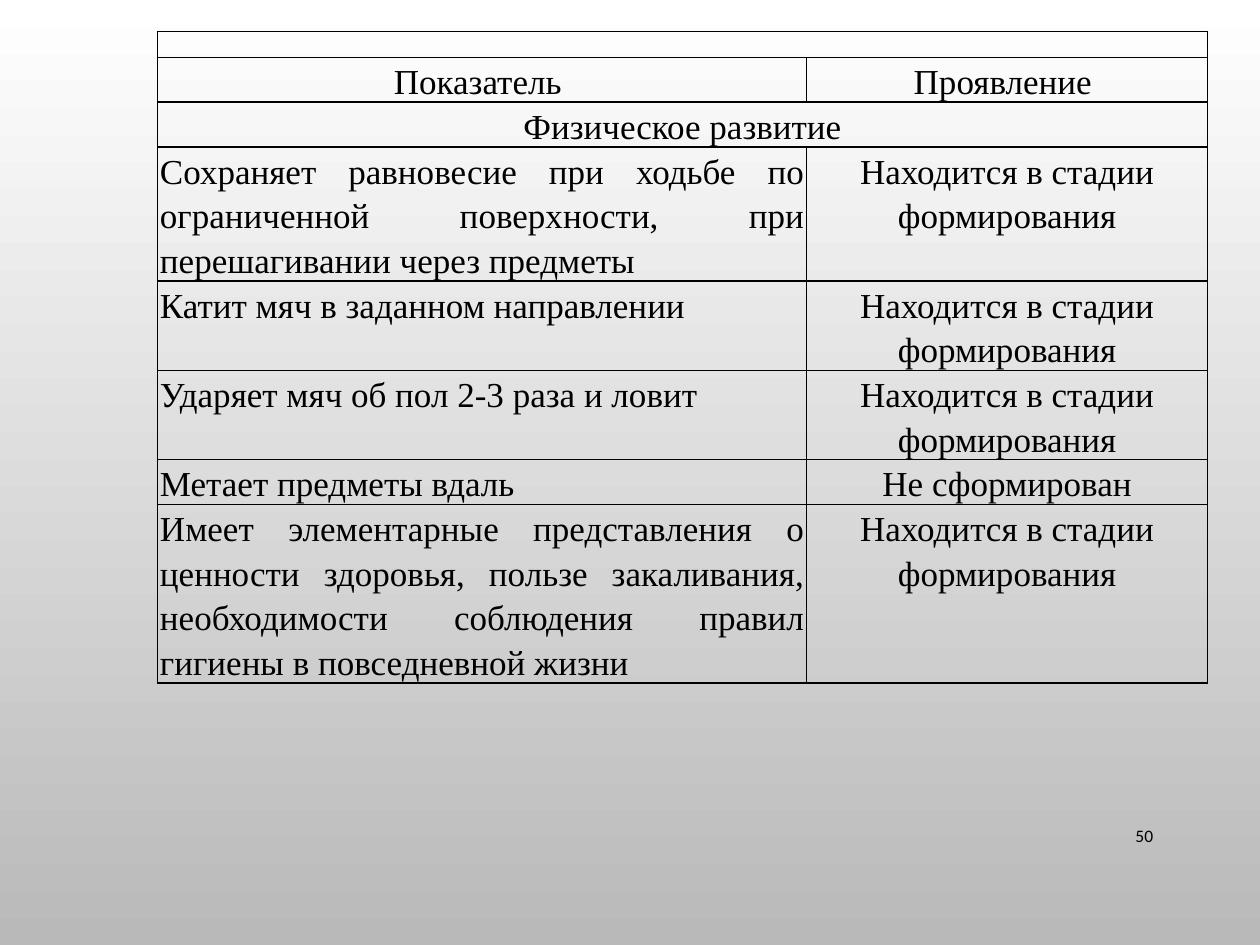
from lxml.etree import SubElement
from pptx import Presentation
from pptx.dml.color import RGBColor
from pptx.enum.text import MSO_ANCHOR, PP_ALIGN
from pptx.oxml.ns import qn
from pptx.util import Pt

BLACK = "000000"
LINE_HEIGHT = 25.5
SPACER_HEIGHT = 14.9
FORMING = "Находится в стадии формирования"

# Indicator, its manifestation, number of text lines in the row
INDICATORS = [
    ("Сохраняет равновесие при ходьбе по ограниченной поверхности, "
     "при перешагивании через предметы", FORMING, 3),
    ("Катит мяч в заданном направлении", FORMING, 2),
    ("Ударяет мяч об пол 2-3 раза и ловит", FORMING, 2),
    ("Метает предметы вдаль", "Не сформирован", 1),
    ("Имеет элементарные представления о ценности здоровья, пользе "
     "закаливания, необходимости соблюдения правил гигиены в "
     "повседневной жизни", FORMING, 4),
]


def color(hex_string):
    return RGBColor.from_string(hex_string)


def style_text(paragraph, font_name, size, alignment):
    paragraph.alignment = alignment
    paragraph.font.name = font_name
    paragraph.font.size = Pt(size)
    paragraph.font.color.rgb = color(BLACK)


def add_borders(cell):
    properties = cell._tc.get_or_add_tcPr()
    for position, side in enumerate(("a:lnL", "a:lnR", "a:lnT", "a:lnB")):
        border = properties.makeelement(qn(side), w=str(Pt(1)))
        fill = SubElement(border, qn("a:solidFill"))
        SubElement(fill, qn("a:srgbClr"), val=BLACK)
        properties.insert(position, border)


def fill_cell(cell, text, alignment):
    paragraph = cell.text_frame.paragraphs[0]
    paragraph.line_spacing = 1.15
    style_text(paragraph, "Times New Roman", 20, alignment)
    paragraph.add_run().text = text


def paint_background(slide):
    fill = slide.background.fill
    fill.gradient()
    fill.gradient_angle = 270
    for stop, position, shade in zip(fill.gradient_stops, (0, 1),
                                     ("FFFFFF", "B9B9B9")):
        stop.position = position
        stop.color.rgb = color(shade)


def add_indicator_table(slide, left, top, width):
    line_counts = [1, 1] + [lines for _, _, lines in INDICATORS]
    heights = [SPACER_HEIGHT] + [LINE_HEIGHT * n for n in line_counts]
    table = slide.shapes.add_table(len(heights), 2, Pt(left), Pt(top),
                                   Pt(width), Pt(sum(heights))).table
    table.first_row = table.horz_banding = False
    indicator_width = 371
    table.columns[0].width = Pt(indicator_width)
    table.columns[1].width = Pt(width - indicator_width)
    for row, height in zip(table.rows, heights):
        row.height = Pt(height)
    for cell in table.iter_cells():
        cell.margin_left = cell.margin_right = Pt(1.44)
        cell.margin_top = cell.margin_bottom = 0
        cell.fill.background()
        add_borders(cell)

    # Empty top row and section row span both columns
    for row in (0, 2):
        table.cell(row, 0).merge(table.cell(row, 1))
    for column in range(2):
        spacer = table.cell(0, column).text_frame.paragraphs[0]
        SubElement(spacer._p, qn("a:endParaRPr"), sz="1000")

    # Headings
    for column, heading in enumerate(("Показатель ", "Проявление ")):
        fill_cell(table.cell(1, column), heading, PP_ALIGN.CENTER)
    fill_cell(table.cell(2, 0), "Физическое развитие", PP_ALIGN.CENTER)

    # Indicators
    for row, (indicator, manifestation, _) in enumerate(INDICATORS, 3):
        fill_cell(table.cell(row, 0), indicator, PP_ALIGN.JUSTIFY)
        fill_cell(table.cell(row, 1), manifestation, PP_ALIGN.CENTER)


def add_page_number(slide, left, top, width, height):
    frame = slide.shapes.add_textbox(Pt(left), Pt(top), Pt(width),
                                     Pt(height)).text_frame
    frame.word_wrap = True
    frame.vertical_anchor = MSO_ANCHOR.MIDDLE
    number = frame.paragraphs[0]
    style_text(number, "Calibri", 10, PP_ALIGN.RIGHT)
    number.add_run().text = "50"


def main():
    presentation = Presentation()
    presentation.slide_width = Pt(720)
    presentation.slide_height = Pt(540)
    slide = presentation.slides.add_slide(presentation.slide_layouts[6])
    paint_background(slide)
    add_indicator_table(slide, 90, 18, 600)
    add_page_number(slide, 620.6, 463, 45.4, 28.8)
    presentation.save("out.pptx")


if __name__ == "__main__":
    main()
